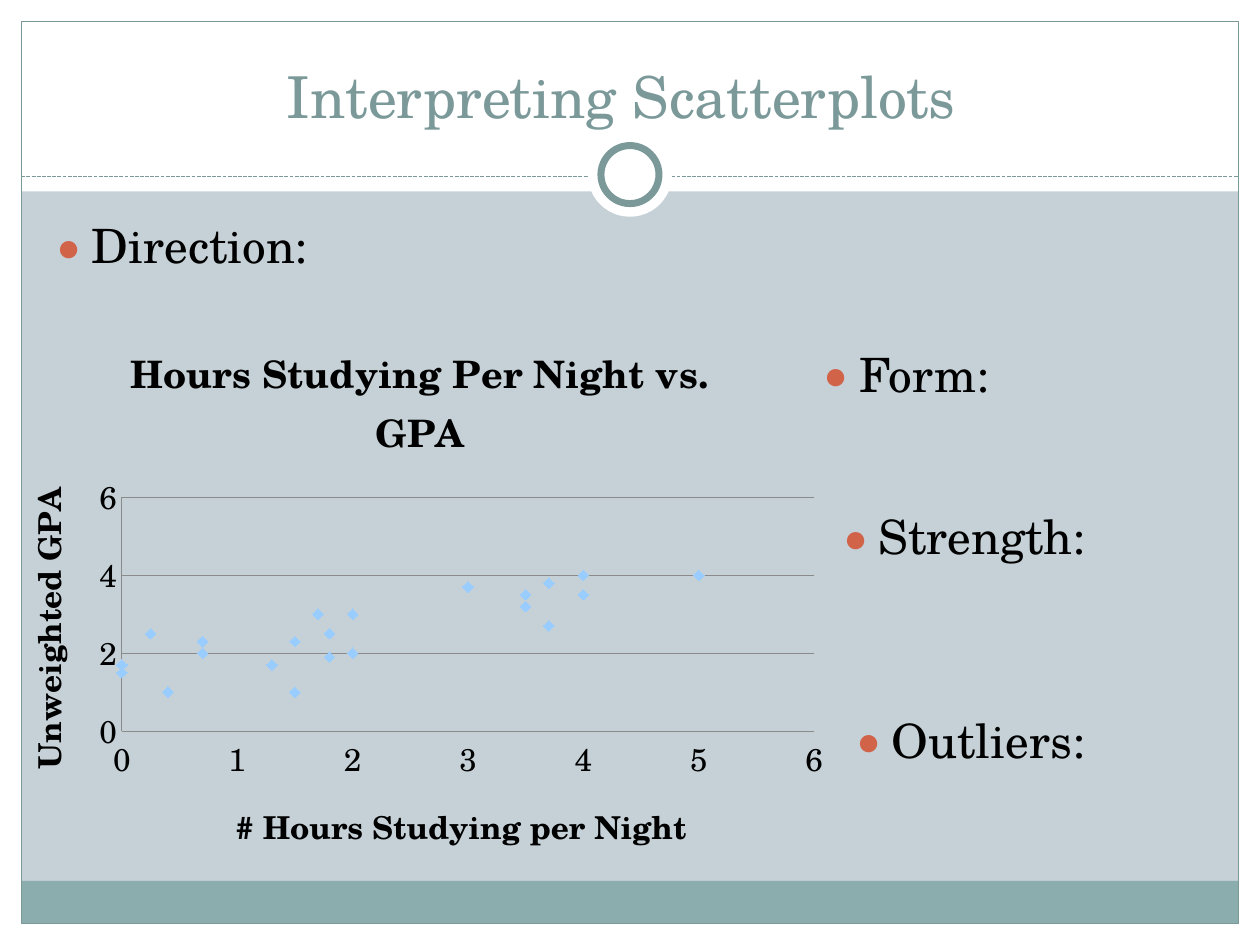
from lxml import etree
from pptx import Presentation
from pptx.chart.data import XyChartData
from pptx.dml.color import RGBColor
from pptx.enum.chart import XL_CHART_TYPE, XL_MARKER_STYLE, XL_TICK_MARK
from pptx.enum.dml import MSO_LINE
from pptx.enum.shapes import MSO_CONNECTOR, MSO_SHAPE
from pptx.enum.text import MSO_ANCHOR, MSO_AUTO_SIZE, PP_ALIGN
from pptx.oxml import parse_xml
from pptx.oxml.ns import qn
from pptx.util import Cm, Pt

SCATTER, DIAMOND = XL_CHART_TYPE.XY_SCATTER, XL_MARKER_STYLE.DIAMOND
NO_TICK, DASH = XL_TICK_MARK.NONE, MSO_LINE.SQUARE_DOT
RECT, OVAL, LINE = MSO_SHAPE.RECTANGLE, MSO_SHAPE.OVAL, MSO_CONNECTOR.STRAIGHT
TOP, BOTTOM = MSO_ANCHOR.TOP, MSO_ANCHOR.BOTTOM
LEFT, CENTER = PP_ALIGN.LEFT, PP_ALIGN.CENTER
FIXED = MSO_AUTO_SIZE.NONE

FONT = "TeX Gyre Schola"
WHITE, BLACK, TEAL, BAND = "FFFFFF", "000000", "7C999A", "8CADAE"
BACK, RED, BLUE, GRID = "C5D1D7", "D16349", "99CCFF", "8B8B8B"
WIDE, HIGH = 25.4, 19.05
POINTS = [
    (0, 1.5), (0.4, 1), (0.7, 2), (0.7, 2.3), (0, 1.7), (0.25, 2.5),
    (1.5, 1), (1.3, 1.7), (1.5, 2.3), (1.7, 3), (1.8, 1.9), (1.8, 2.5),
    (2, 2), (2, 3), (3.5, 3.5), (3, 3.7), (3.5, 3.2), (3.7, 2.7),
    (3.7, 3.8), (4, 4), (4, 3.5), (5, 4),
]


def color(code):
    return RGBColor.from_string(code)


def style(font, size, code=BLACK, bold=False):
    font.name, font.size, font.bold = FONT, Pt(size), bold
    font.color.rgb = color(code)


def place(shape, box):
    shape.left, shape.top, shape.width, shape.height = map(Cm, box)


def bullet(para):
    para.space_before = Pt(5.4)
    props = para._p.get_or_add_pPr()
    props.set("marL", str(Cm(0.76)))
    props.set("indent", str(-Cm(0.76)))
    tint = etree.SubElement(props, qn("a:buClr"))
    etree.SubElement(tint, qn("a:srgbClr"), val=RED)
    etree.SubElement(props, qn("a:buSzPct"), val="85000")
    etree.SubElement(props, qn("a:buFont"), typeface=FONT)
    etree.SubElement(props, qn("a:buChar"), char="●")


def write(shape, text, size=27, code=BLACK, align=LEFT, anchor=TOP, dot=False):
    frame = shape.text_frame
    frame.word_wrap, frame.auto_size = True, FIXED
    frame.vertical_anchor = anchor
    para = frame.paragraphs[0]
    para.alignment = align
    if dot:
        bullet(para)
    run = para.add_run()
    run.text = text
    style(run.font, size, code)


def block(slide, kind, box, fill=None, line=None, width=0.75):
    shape = slide.shapes.add_shape(kind, *map(Cm, box))
    shape.shadow.inherit = False
    if fill:
        shape.fill.solid()
        shape.fill.fore_color.rgb = color(fill)
    else:
        shape.fill.background()
    if line:
        shape.line.color.rgb, shape.line.width = color(line), Pt(width)
    else:
        shape.line.fill.background()


def add_frame(slide, box, head):
    x, y, w, h = box
    right, low = x + w, y + h
    # White margins and header, then the band at the foot
    block(slide, RECT, (0, low, WIDE, HIGH - low), WHITE)
    block(slide, RECT, (0, 0, WIDE, head), WHITE)
    for left in (0, right):
        block(slide, RECT, (left, 0, x, HIGH), WHITE)
    block(slide, RECT, (x, low - 0.86, w, 0.86), BAND)
    block(slide, RECT, box, line=TEAL)
    # Dashed rule
    rule_y = head - 0.3
    rule = slide.shapes.add_connector(LINE, Cm(x), Cm(rule_y), Cm(right), Cm(rule_y))
    rule.line.color.rgb, rule.line.width = color(TEAL), Pt(0.75)
    rule.line.dash_style = DASH
    etree.SubElement(rule._element.spPr, qn("a:effectLst"))
    # Ring on the rule
    mid = x + w / 2
    for size, line in ((1.7, None), (1.17, TEAL)):
        spot = (mid - size / 2, rule_y - 0.04 - size / 2, size, size)
        block(slide, OVAL, spot, WHITE, line, 4)


def add_heads(slide, title_box, body_box):
    title, body = slide.shapes.title, slide.placeholders[1]
    for shape, box in ((title, title_box), (body, body_box)):
        place(shape, box)
        slide.shapes._spTree.append(shape._element)  # bring to front
    write(title, "Interpreting Scatterplots ", 33, TEAL, CENTER, BOTTOM)
    write(body, "Direction:", dot=True)


def name(owner, text, size):
    frame = owner.text_frame
    frame.text = text
    style(frame.paragraphs[0].runs[0].font, size, bold=True)


def add_plot(slide, box):
    data = XyChartData()
    series = data.add_series("Series 1")
    for x, y in POINTS:
        series.add_data_point(x, y)
    chart = slide.shapes.add_chart(SCATTER, *map(Cm, box), data).chart
    style(chart.font, 18)
    chart.has_legend, chart.has_title = False, True
    name(chart.chart_title, "Hours Studying Per Night vs. GPA", 21.6)
    # Axes
    for axis, text, step in (
        (chart.category_axis, "# Hours Studying per Night", 1),
        (chart.value_axis, "Unweighted GPA", 2),
    ):
        axis.minimum_scale, axis.maximum_scale, axis.major_unit = 0, 6, step
        axis.major_tick_mark = axis.minor_tick_mark = NO_TICK
        axis.has_major_gridlines = axis is not chart.category_axis and step == 2
        axis.format.line.color.rgb = color(GRID)
        axis.tick_labels.number_format = "General"
        axis.tick_labels.number_format_is_linked = False
        name(axis.axis_title, text, 18)
    grid = chart.value_axis.major_gridlines.format.line
    grid.color.rgb, grid.width = color(GRID), Pt(0.75)
    # Markers without a joining line
    dots = chart.plots[0].series[0]
    dots.smooth = False
    dots.format.line.fill.background()
    dots.marker.style, dots.marker.size = DIAMOND, 6
    dots.marker.format.fill.solid()
    dots.marker.format.fill.fore_color.rgb = color(BLUE)
    dots.marker.format.line.fill.background()
    # Inner plot area as shares of the chart
    area = chart._chartSpace.find(".//" + qn("c:plotArea"))
    for old in area.findall(qn("c:layout")):
        area.remove(old)
    parts = (("layoutTarget", "inner"), ("xMode", "edge"), ("yMode", "edge"),
             ("x", 0.145), ("y", 0.326), ("w", 0.824), ("h", 0.418))
    inner = "".join(f'<c:{tag} val="{val}"/>' for tag, val in parts)
    area.insert(0, parse_xml(
        '<c:layout xmlns:c="http://schemas.openxmlformats.org/drawingml/2006/chart">'
        f"<c:manualLayout>{inner}</c:manualLayout></c:layout>"))


def add_label(slide, text, box):
    write(slide.shapes.add_textbox(*map(Cm, box)), text, dot=True)


def main():
    deck = Presentation()
    deck.slide_width, deck.slide_height = Cm(WIDE), Cm(HIGH)
    slide = deck.slides.add_slide(deck.slide_layouts[1])
    slide.background.fill.solid()
    slide.background.fill.fore_color.rgb = color(BACK)
    add_frame(slide, (0.43, 0.43, WIDE - 0.86, 18.19), 3.86)
    add_heads(slide, (0.84, 0.64, 23.7, 2.1), (0.84, 4.24, 23.62, 1.68))
    add_plot(slide, (0, 6.35, 16.94, 11.28))
    add_label(slide, "Form:", (16.31, 6.83, 11.23, 1.68))
    add_label(slide, "Strength:", (16.71, 10.11, 6.3, 1.68))
    add_label(slide, "Outliers:", (16.97, 14.22, 6.3, 1.68))
    deck.save("out.pptx")


if __name__ == "__main__":
    main()
